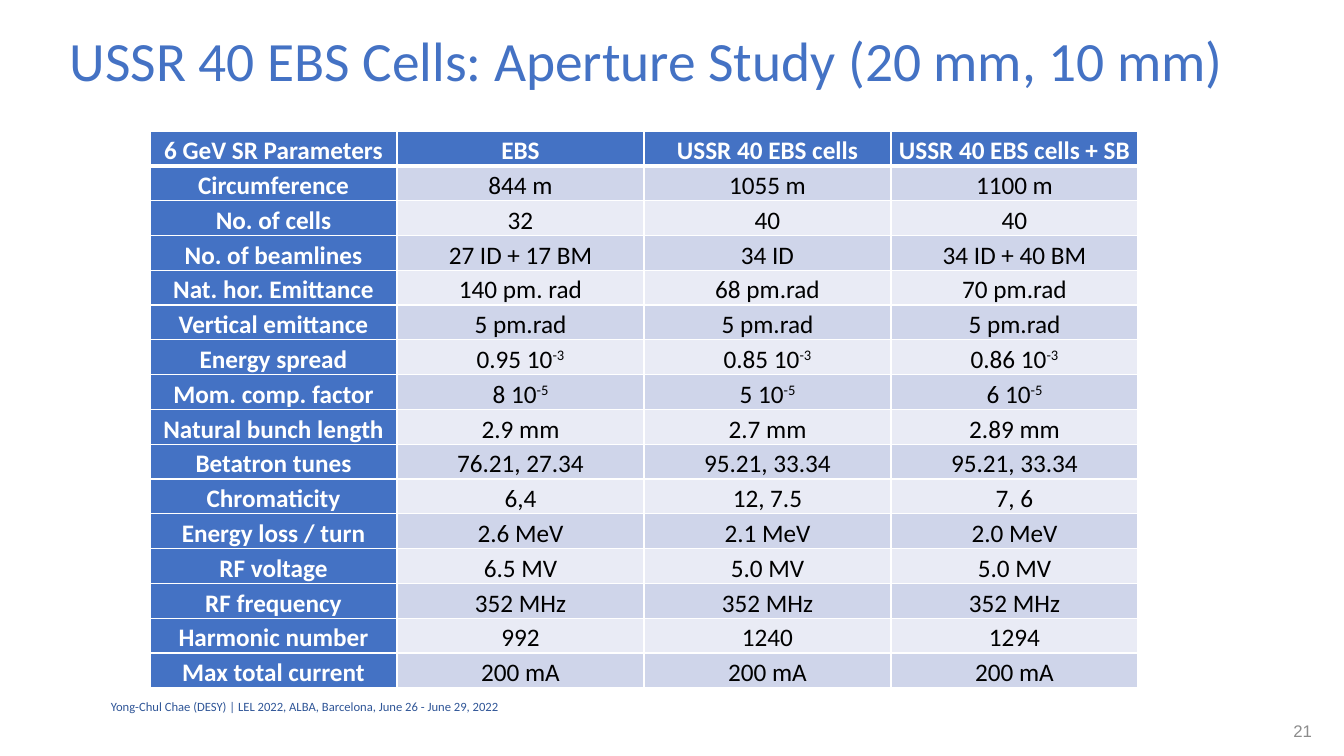
from lxml.etree import SubElement
from pptx import Presentation
from pptx.dml.color import RGBColor
from pptx.enum.text import MSO_ANCHOR as Anchor, PP_ALIGN as Align
from pptx.oxml.ns import qn
from pptx.util import Pt

TITLE = "USSR 40 EBS Cells: Aperture Study (20 mm, 10 mm)"
FOOTER = "Yong-Chul Chae (DESY) | LEL 2022, ALBA, Barcelona, June 26 - June 29, 2022"
PAGE_NUMBER = "21"

# A caret separates a value from its superscript exponent.
PARAMETERS = [
    ("6 GeV SR Parameters", "EBS", "USSR 40 EBS cells", "USSR 40 EBS cells + SB"),
    ("Circumference", "844 m", "1055 m", "1100 m"),
    ("No. of cells", "32", "40", "40"),
    ("No. of beamlines", "27 ID + 17 BM", "34 ID", "34 ID + 40 BM"),
    ("Nat. hor. Emittance", "140 pm. rad", "68 pm.rad", "70 pm.rad"),
    ("Vertical emittance", "5 pm.rad", "5 pm.rad", "5 pm.rad"),
    ("Energy spread", "0.95 10^-3", "0.85 10^-3", "0.86 10^-3"),
    ("Mom. comp. factor", "8 10^-5", "5 10^-5", "6 10^-5"),
    ("Natural bunch length", "2.9 mm", "2.7 mm", "2.89 mm"),
    ("Betatron tunes", "76.21, 27.34", "95.21, 33.34", "95.21, 33.34"),
    ("Chromaticity", "6,4", "12, 7.5", "7, 6"),
    ("Energy loss / turn", "2.6 MeV", "2.1 MeV", "2.0 MeV"),
    ("RF voltage", "6.5 MV", "5.0 MV", "5.0 MV"),
    ("RF frequency", "352 MHz", "352 MHz", "352 MHz"),
    ("Harmonic number", "992", "1240", "1294"),
    ("Max total current", "200 mA", "200 mA", "200 mA"),
]

COLORS = {
    "accent": "4472C4",
    "footer": "2F5597",
    "page": "8C8C8C",
    "light": "FFFFFF",
    "dark": "000000",
    "odd band": "CFD5EA",
    "even band": "E9EBF5",
}

PX_PER_INCH = 100.8
SLIDE_WIDTH, SLIDE_HEIGHT = 1344, 756
TABLE_LEFT, TABLE_TOP = 150, 131
COLUMN_WIDTH, ROW_HEIGHT = 247, 30
CELL_MARGIN = 7


def px(length):
    return round(length * 914400 / PX_PER_INCH)


def rgb(name):
    return RGBColor.from_string(COLORS[name])


def add_run(paragraph, text, size, color, font="Calibri", bold=False):
    run = paragraph.add_run()
    run.text = text
    run.font.size = Pt(size)
    run.font.name = font
    run.font.bold = bold
    run.font.color.rgb = rgb(color)
    return run


def add_line(slide, box, text, size, color, font="Calibri",
             anchor=Anchor.MIDDLE, align=Align.LEFT):
    frame = slide.shapes.add_textbox(*map(px, box)).text_frame
    frame.word_wrap = True
    frame.vertical_anchor = anchor
    paragraph = frame.paragraphs[0]
    paragraph.alignment = align
    add_run(paragraph, text, size, color, font)
    return paragraph


def add_borders(cell, widths):
    """Draw white borders; widths maps the sides L, R, T, B to points."""
    properties = cell._tc.get_or_add_tcPr()
    for side, width in widths.items():
        border = SubElement(properties, qn(f"a:ln{side}"), w=str(Pt(width)))
        fill = SubElement(border, qn("a:solidFill"))
        SubElement(fill, qn("a:srgbClr"), val=COLORS["light"])


def fill_cell(cell, content, row, column):
    heading = row == 0 or column == 0
    add_borders(cell, {"L": 1, "R": 1, "T": 3 if row == 1 else 1,
                       "B": 3 if row == 0 else 1})
    band = "odd band" if row % 2 else "even band"
    cell.fill.solid()
    cell.fill.fore_color.rgb = rgb("accent" if heading else band)
    cell.margin_left = cell.margin_right = px(CELL_MARGIN)
    cell.margin_top = cell.margin_bottom = 0

    paragraph = cell.text_frame.paragraphs[0]
    paragraph.alignment = Align.CENTER
    paragraph.line_spacing = 1.15
    paragraph.space_after = Pt(10)
    value, _, exponent = content.partition("^")
    color = "light" if heading else "dark"
    add_run(paragraph, value, 18, color, bold=heading)
    if exponent:
        raised = add_run(paragraph, exponent, 18, color, bold=heading)
        raised._r.get_or_add_rPr().set("baseline", "30000")


def add_parameter_table(slide):
    rows, columns = len(PARAMETERS), len(PARAMETERS[0])
    table = slide.shapes.add_table(
        rows, columns, px(TABLE_LEFT), px(TABLE_TOP),
        px(columns * COLUMN_WIDTH), px(rows * ROW_HEIGHT)).table
    for column in table.columns:
        column.width = px(COLUMN_WIDTH)
    for r, parameter in enumerate(PARAMETERS):
        table.rows[r].height = px(ROW_HEIGHT)
        for c, content in enumerate(parameter):
            fill_cell(table.cell(r, c), content, r, c)


def main():
    deck = Presentation()
    deck.slide_width, deck.slide_height = px(SLIDE_WIDTH), px(SLIDE_HEIGHT)
    slide = deck.slides.add_slide(deck.slide_layouts[6])
    title = add_line(slide, (60, 37, 1236, 53), TITLE, 39.6, "accent")
    title.line_spacing = 0.9
    add_parameter_table(slide)
    add_line(slide, (101, 694, 873, 25), FOOTER, 9, "footer")
    add_line(slide, (1266, 716, 56, 40), PAGE_NUMBER, 12, "page",
             font="Arial", anchor=Anchor.TOP, align=Align.RIGHT)
    deck.save("out.pptx")


if __name__ == "__main__":
    main()
